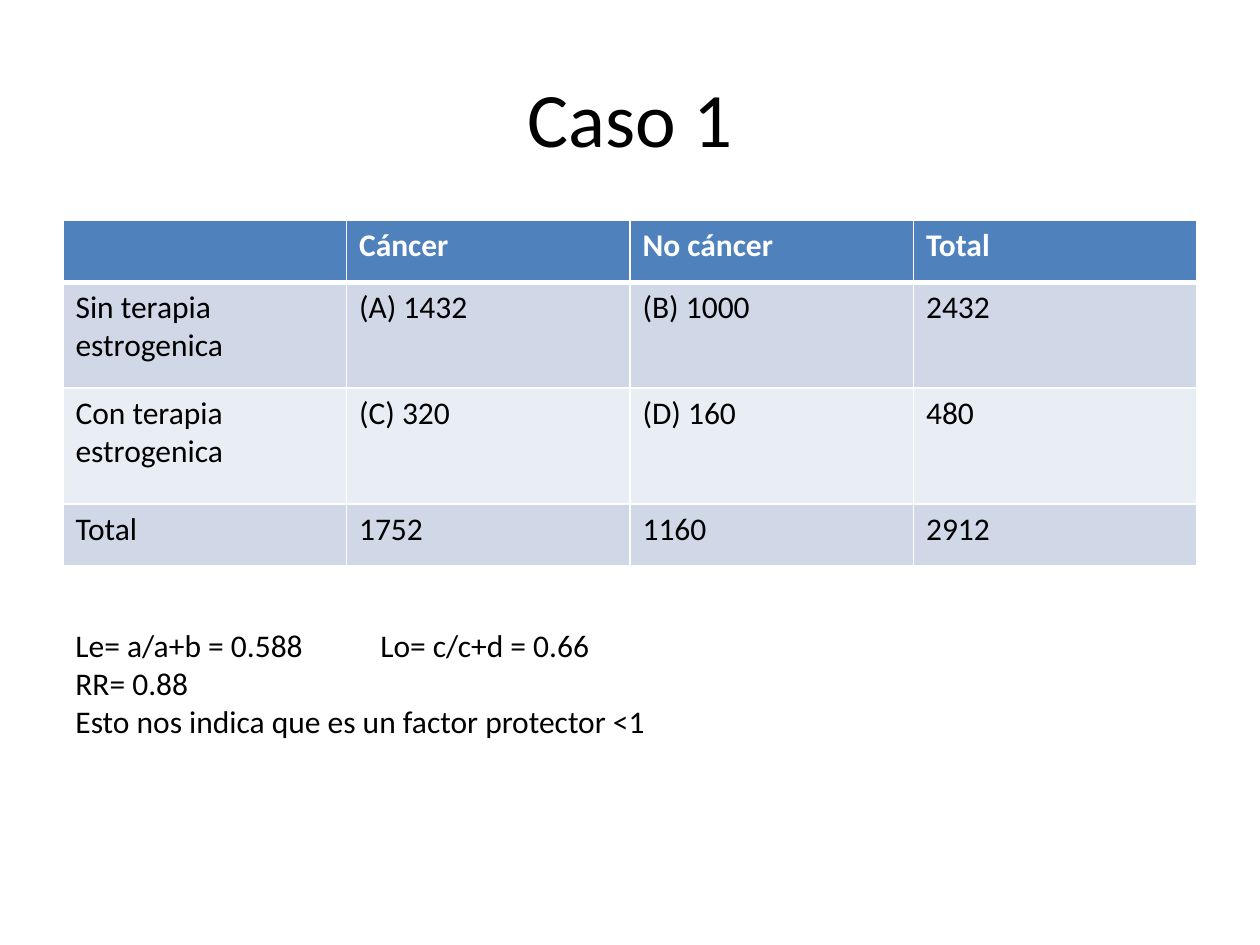
from lxml import etree
from pptx import Presentation
from pptx.dml.color import RGBColor
from pptx.enum import text as txt
from pptx.oxml import ns
from pptx.util import Inches, Pt

COLORS = {
    "ink": "000000",
    "white": "FFFFFF",
    "header": "4F81BD",
    "odd_row": "D0D8E8",
    "even_row": "E9EDF4",
}
FONT = "Calibri"
ROWS = [
    ["", "Cáncer", "No cáncer", "Total"],
    ["Sin terapia estrogenica", "(A) 1432", "(B) 1000", "2432"],
    ["Con terapia estrogenica", "(C) 320", "(D) 160", "480"],
    ["Total", "1752", "1160", "2912"],
]
ROW_HEIGHTS = [0.49, 0.84, 0.92, 0.49]
FINDINGS = [
    "Le= a/a+b = 0.588\tLo= c/c+d = 0.66",
    "RR= 0.88",
    "Esto nos indica que es un factor protector <1",
]


def write(frame, lines, size=18, color="ink", bold=False,
          align=txt.PP_ALIGN.LEFT, anchor=txt.MSO_ANCHOR.TOP):
    frame.word_wrap = True
    frame.vertical_anchor = anchor
    for index, line in enumerate(lines):
        paragraph = frame.add_paragraph() if index else frame.paragraphs[0]
        paragraph.alignment = align
        paragraph.font.size = Pt(size)
        if not line:
            continue
        run = paragraph.add_run()
        run.text = line
        run.font.name = FONT
        run.font.size = Pt(size)
        run.font.bold = bold
        run.font.color.rgb = RGBColor.from_string(COLORS[color])


def add_borders(cell, top, bottom):
    properties = cell._tc.get_or_add_tcPr()
    for side, width in (("L", 1), ("R", 1), ("T", top), ("B", bottom)):
        line = etree.SubElement(properties, ns.qn(f"a:ln{side}"), w=str(Pt(width)))
        fill = etree.SubElement(line, ns.qn("a:solidFill"))
        etree.SubElement(fill, ns.qn("a:srgbClr"), val=COLORS["white"])


def add_title(slide, left, top, width, height):
    title = slide.shapes.add_textbox(left, top, width, height)
    write(title.text_frame, ["Caso 1"], size=44,
          align=txt.PP_ALIGN.CENTER, anchor=txt.MSO_ANCHOR.MIDDLE)


def add_case_table(slide, left, top, width, height):
    table = slide.shapes.add_table(
        len(ROWS), len(ROWS[0]), left, top, width, height).table
    for row, row_height in zip(table.rows, ROW_HEIGHTS):
        row.height = Inches(row_height)
    for r, labels in enumerate(ROWS):
        is_header = r == 0
        fill = "header" if is_header else "odd_row" if r % 2 else "even_row"
        for c, label in enumerate(labels):
            cell = table.cell(r, c)
            add_borders(cell, top=3 if r == 1 else 1, bottom=3 if is_header else 1)
            cell.fill.solid()
            cell.fill.fore_color.rgb = RGBColor.from_string(COLORS[fill])
            write(cell.text_frame, [label], bold=is_header,
                  color="white" if is_header else "ink")


def add_findings(slide, left, top, width, height):
    findings = slide.shapes.add_textbox(left, top, width, height).text_frame
    write(findings, FINDINGS)
    properties = findings.paragraphs[0]._p.get_or_add_pPr()
    tabs = etree.Element(ns.qn("a:tabLst"))
    etree.SubElement(tabs, ns.qn("a:tab"), pos=str(Inches(2.42)), algn="l")
    properties.insert(0, tabs)


def main():
    deck = Presentation()
    deck.slide_width, deck.slide_height = Inches(10), Inches(7.5)
    slide = deck.slides.add_slide(deck.slide_layouts[6])
    margin, width = Inches(0.5), Inches(9)
    add_title(slide, margin, Inches(0.3), width, Inches(1.25))
    add_case_table(slide, margin, Inches(1.75), width, Inches(sum(ROW_HEIGHTS)))
    add_findings(slide, margin, Inches(4.92), Inches(8.92), Inches(1.01))
    deck.save("out.pptx")


if __name__ == "__main__":
    main()
